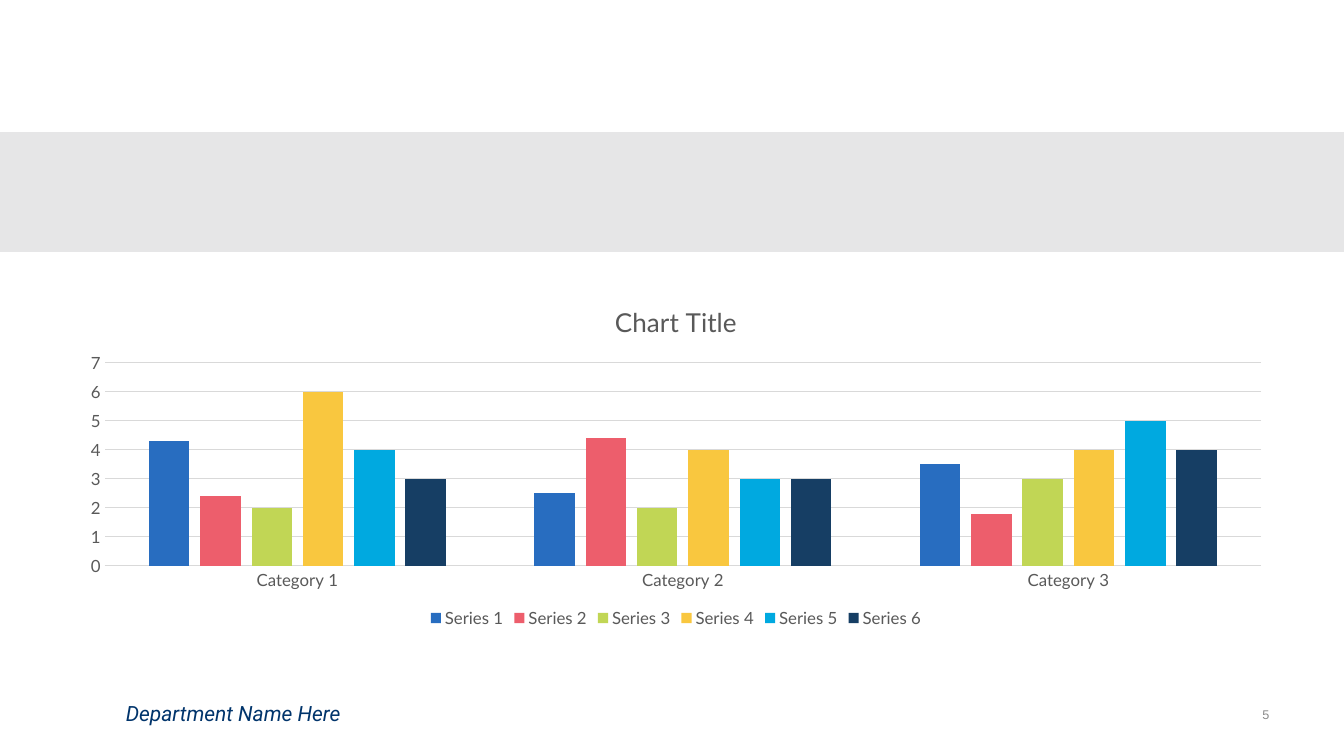
from dataclasses import dataclass

from pptx import Presentation
from pptx import util as u
from pptx.chart import data as chart_data
from pptx.dml import color
from pptx.enum import chart as chart_enum
from pptx.enum import shapes, text
from pptx.oxml import ns


@dataclass(frozen=True)
class Theme:
    band: str = "E6E6E7"
    navy: str = "00346B"
    page_grey: str = "8C8C8C"
    chart_text: str = "595959"
    grid: str = "D9D9D9"
    chart_font: str = "Lato"
    department_font: str = "Roboto"
    page_font: str = "Arial"
    chart_title_size: float = 18.6
    department_size: float = 15
    chart_size: float = 12
    page_size: float = 9
    rule_width: float = 0.75


@dataclass(frozen=True)
class Box:
    left: float
    top: float
    width: float
    height: float

    def lengths(self) -> tuple:
        return tuple(map(u.Inches, (self.left, self.top, self.width, self.height)))


@dataclass(frozen=True)
class Series:
    name: str
    values: tuple
    fill: str


THEME = Theme()
SLIDE_WIDTH, SLIDE_HEIGHT = 13.33, 7.5
CATEGORIES = ("Category 1", "Category 2", "Category 3")
SERIES = (
    Series("Series 1", (4.3, 2.5, 3.5), "286DC0"),
    Series("Series 2", (2.4, 4.4, 1.8), "ED5E6C"),
    Series("Series 3", (2, 2, 3), "C1D655"),
    Series("Series 4", (6, 4, 4), "F9C73F"),
    Series("Series 5", (4, 3, 5), "00A9E0"),
    Series("Column1", (), "00A9E0"),
    Series("Series 6", (3, 3, 4), "163E64"),
)


def rgb(value: str) -> color.RGBColor:
    return color.RGBColor.from_string(value)


def format_font(font, name: str, size: float, fill: str, italic: bool = False) -> None:
    font.name = name
    font.size = u.Pt(size)
    font.bold = False
    font.italic = italic
    font.color.rgb = rgb(fill)


def add_text(slide, box: Box, content: str, *, font: str, size: float, fill: str,
             italic: bool = False, align=text.PP_ALIGN.LEFT,
             insets: tuple = (0.1, 0.05)) -> None:
    frame = slide.shapes.add_textbox(*box.lengths()).text_frame
    frame.word_wrap = True
    frame.margin_left = frame.margin_right = u.Inches(insets[0])
    frame.margin_top = frame.margin_bottom = u.Inches(insets[1])
    paragraph = frame.paragraphs[0]
    paragraph.alignment = align
    run = paragraph.add_run()
    run.text = content
    format_font(run.font, font, size, fill, italic)


def add_band(slide, box: Box) -> None:
    band = slide.shapes.add_shape(shapes.MSO_SHAPE.RECTANGLE, *box.lengths())
    band.shadow.inherit = False
    band.fill.solid()
    band.fill.fore_color.rgb = rgb(THEME.band)
    band.line.fill.background()


def format_rule(line) -> None:
    line.color.rgb = rgb(THEME.grid)
    line.width = u.Pt(THEME.rule_width)


def format_axes(chart) -> None:
    for axis in (chart.category_axis, chart.value_axis):
        axis.major_tick_mark = axis.minor_tick_mark = chart_enum.XL_TICK_MARK.NONE
        format_font(axis.tick_labels.font, THEME.chart_font, THEME.chart_size,
                    THEME.chart_text)
    format_rule(chart.category_axis.format.line)
    values = chart.value_axis
    values.minimum_scale, values.maximum_scale, values.major_unit = 0, 7, 1
    values.format.line.fill.background()
    values.has_major_gridlines = True
    format_rule(values.major_gridlines.format.line)


def add_column_chart(slide, box: Box) -> None:
    content = chart_data.CategoryChartData(number_format="General")
    content.categories = CATEGORIES
    for series in SERIES:
        content.add_series(series.name, series.values)
    chart = slide.shapes.add_chart(
        chart_enum.XL_CHART_TYPE.COLUMN_CLUSTERED, *box.lengths(), content).chart

    chart.has_title = True
    chart.chart_title.include_in_layout = False
    run = chart.chart_title.text_frame.paragraphs[0].add_run()
    run.text = "Chart Title"
    format_font(run.font, THEME.chart_font, THEME.chart_title_size, THEME.chart_text)

    chart.has_legend = True
    chart.legend.position = chart_enum.XL_LEGEND_POSITION.BOTTOM
    chart.legend.include_in_layout = False
    format_font(chart.legend.font, THEME.chart_font, THEME.chart_size, THEME.chart_text)
    format_axes(chart)

    plot = chart.plots[0]
    plot.gap_width, plot.overlap, plot.vary_by_categories = 219, -27, False
    for columns, series in zip(plot.series, SERIES):
        columns.invert_if_negative = False
        columns.format.fill.solid()
        columns.format.fill.fore_color.rgb = rgb(series.fill)
        if not series.values:
            element = columns._element
            element.remove(element.find(ns.qn("c:val")))


def main() -> None:
    presentation = Presentation()
    presentation.slide_width = u.Inches(SLIDE_WIDTH)
    presentation.slide_height = u.Inches(SLIDE_HEIGHT)
    slide = presentation.slides.add_slide(
        presentation.slide_layouts.get_by_name("Blank"))

    add_text(slide, Box(1.15, 6.9, 7.2, 0.35), "Department Name Here",
             font=THEME.department_font, size=THEME.department_size,
             fill=THEME.navy, italic=True)
    add_band(slide, Box(0, 1.31, SLIDE_WIDTH, 1.19))
    add_column_chart(slide, Box(0.66, 2.84, 12.09, 3.43))
    add_text(slide, Box(11.5, 7.01, 1.09, 0.24), "5", font=THEME.page_font,
             size=THEME.page_size, fill=THEME.page_grey,
             align=text.PP_ALIGN.RIGHT, insets=(0, 0))
    presentation.save("out.pptx")


if __name__ == "__main__":
    main()
